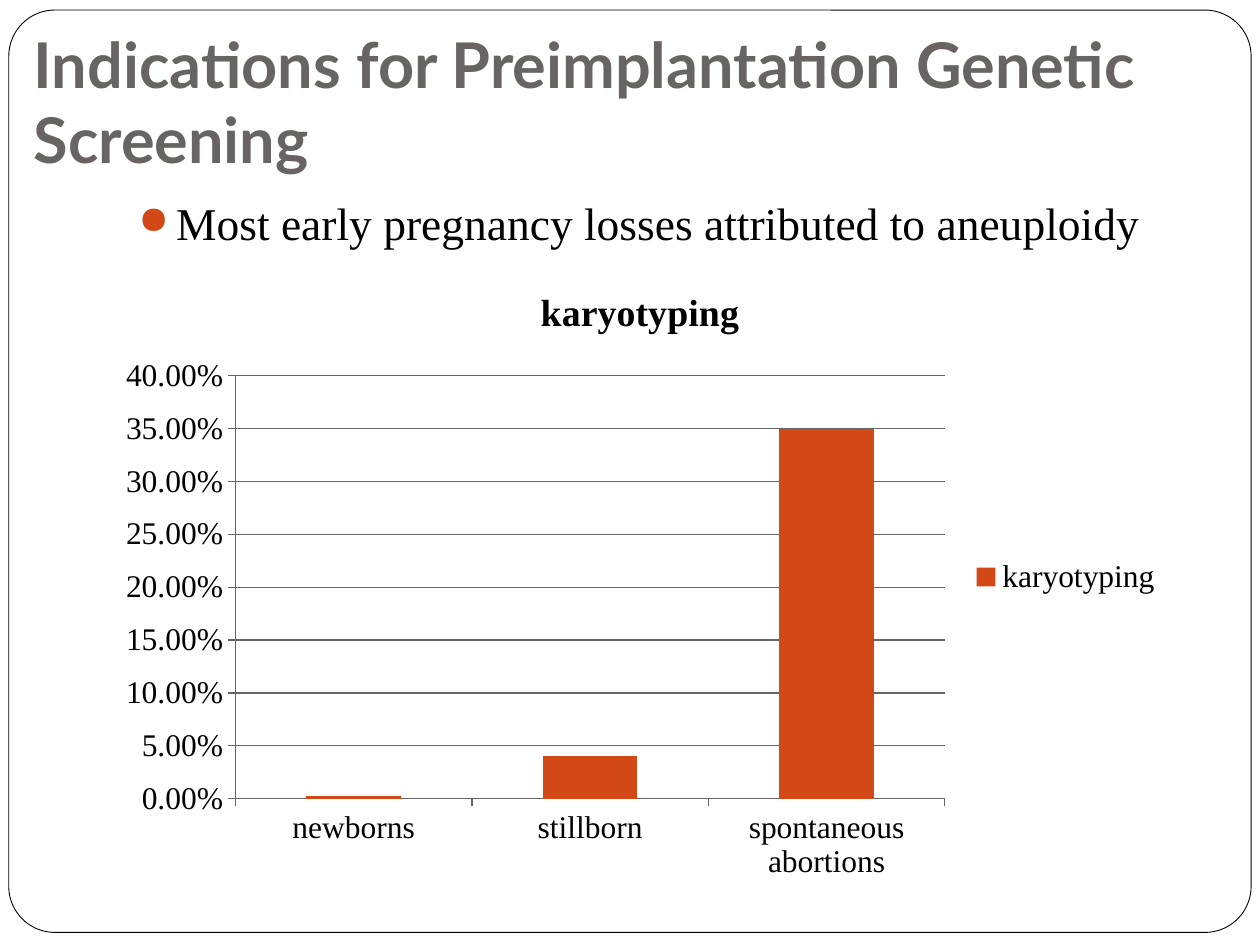
from pptx import Presentation
from pptx.chart.data import CategoryChartData
from pptx.dml.color import RGBColor
from pptx.enum.chart import XL_CHART_TYPE as ChartType, XL_LEGEND_POSITION as LegendPosition
from pptx.enum.chart import XL_TICK_MARK as TickMark
from pptx.enum.shapes import MSO_SHAPE as Shape
from pptx.enum.text import MSO_ANCHOR as Anchor
from pptx.oxml.ns import qn
from pptx.util import Inches, Pt
from lxml.etree import SubElement

ACCENT, GRAY, BLACK, WHITE = "D34817", "696464", "000000", "FFFFFF"
HEADING_FONT, BODY_FONT = "Lato", "Times New Roman"


def color(hex_string):
    """Turn a hex string into a colour."""
    return RGBColor.from_string(hex_string)


def style_font(font, name, size, hex_string, bold=False):
    """Set the face, size, colour and weight of a font."""
    font.name, font.size, font.bold = name, Pt(size), bold
    font.color.rgb = color(hex_string)


def add_frame(slide, left, top, width, height):
    """Draw the rounded border of the slide."""
    frame = slide.shapes.add_shape(
        Shape.ROUNDED_RECTANGLE, Inches(left), Inches(top), Inches(width), Inches(height))
    frame.adjustments[0] = 0.05
    frame.shadow.inherit = False
    frame.fill.solid()
    frame.fill.fore_color.rgb = color(WHITE)
    frame.line.color.rgb = color(BLACK)
    frame.line.width = Pt(0.5)


def add_text(slide, left, top, width, height, text):
    """Add a wrapping text box and return its text frame."""
    box = slide.shapes.add_textbox(Inches(left), Inches(top), Inches(width), Inches(height))
    box.text_frame.word_wrap = True
    box.text_frame.text = text
    return box.text_frame


def add_heading(slide, left, top, width, height):
    """Place the slide heading at the bottom of its box."""
    heading = add_text(slide, left, top, width, height,
                       "Indications for Preimplantation Genetic Screening")
    heading.vertical_anchor = Anchor.BOTTOM
    heading.margin_bottom = Inches(0.1)
    style_font(heading.paragraphs[0].runs[0].font, HEADING_FONT, 36, GRAY, bold=True)


def add_finding(slide, left, top, width, height):
    """Place the bulleted statement above the chart."""
    finding = add_text(slide, left, top, width, height,
                       "Most early pregnancy losses attributed to aneuploidy").paragraphs[0]
    finding.space_before = Pt(5.8)
    style_font(finding.runs[0].font, BODY_FONT, 26, BLACK)
    properties = finding._p.get_or_add_pPr()
    properties.set("marL", str(Inches(0.3)))
    properties.set("indent", str(-Inches(0.3)))
    bullet_color = SubElement(properties, qn("a:buClr"))
    SubElement(bullet_color, qn("a:srgbClr"), val=ACCENT)
    SubElement(properties, qn("a:buSzPct"), val="85000")
    SubElement(properties, qn("a:buChar"), char="●")


def add_karyotyping_chart(slide, left, top, width, height):
    """Chart the aneuploidy rate of each group."""
    rates = CategoryChartData(number_format="0.00%")
    rates.categories = ["newborns", "stillborn", "spontaneous abortions"]
    rates.add_series("karyotyping", [0.003, 0.04, 0.35])
    chart = slide.shapes.add_chart(
        ChartType.COLUMN_CLUSTERED, Inches(left), Inches(top),
        Inches(width), Inches(height), rates).chart
    style_font(chart.font, BODY_FONT, 18, BLACK)

    chart.has_title = True
    title = chart.chart_title.text_frame.paragraphs[0]
    title.text = "karyotyping"
    style_font(title.runs[0].font, BODY_FONT, 21.6, BLACK, bold=True)

    chart.has_legend = True
    chart.legend.position = LegendPosition.RIGHT
    chart.legend.include_in_layout = False

    plot = chart.plots[0]
    plot.vary_by_categories = False
    plot.gap_width = 150
    bars = plot.series[0].format.fill
    bars.solid()
    bars.fore_color.rgb = color(ACCENT)

    rate_axis = chart.value_axis
    rate_axis.minimum_scale, rate_axis.maximum_scale, rate_axis.major_unit = 0, 0.4, 0.05
    rate_axis.tick_labels.number_format = "0.00%"
    rate_axis.tick_labels.number_format_is_linked = False
    rate_axis.has_major_gridlines = True
    rate_axis.major_gridlines.format.line.color.rgb = color(GRAY)
    for axis in (chart.category_axis, rate_axis):
        axis.major_tick_mark = TickMark.OUTSIDE
        axis.format.line.color.rgb = color(GRAY)


def main():
    """Build the slide and save it."""
    deck = Presentation()
    deck.slide_width, deck.slide_height = Inches(10), Inches(7.5)
    slide = deck.slides.add_slide(deck.slide_layouts[6])
    add_frame(slide, 0.07, 0.08, 9.86, 7.32)
    add_heading(slide, 0.17, 0.25, 9.83, 1.25)
    add_finding(slide, 1, 1.5, 8.5, 1.75)
    add_karyotyping_chart(slide, 0.83, 2.08, 8.5, 5)
    deck.save("out.pptx")


if __name__ == "__main__":
    main()
